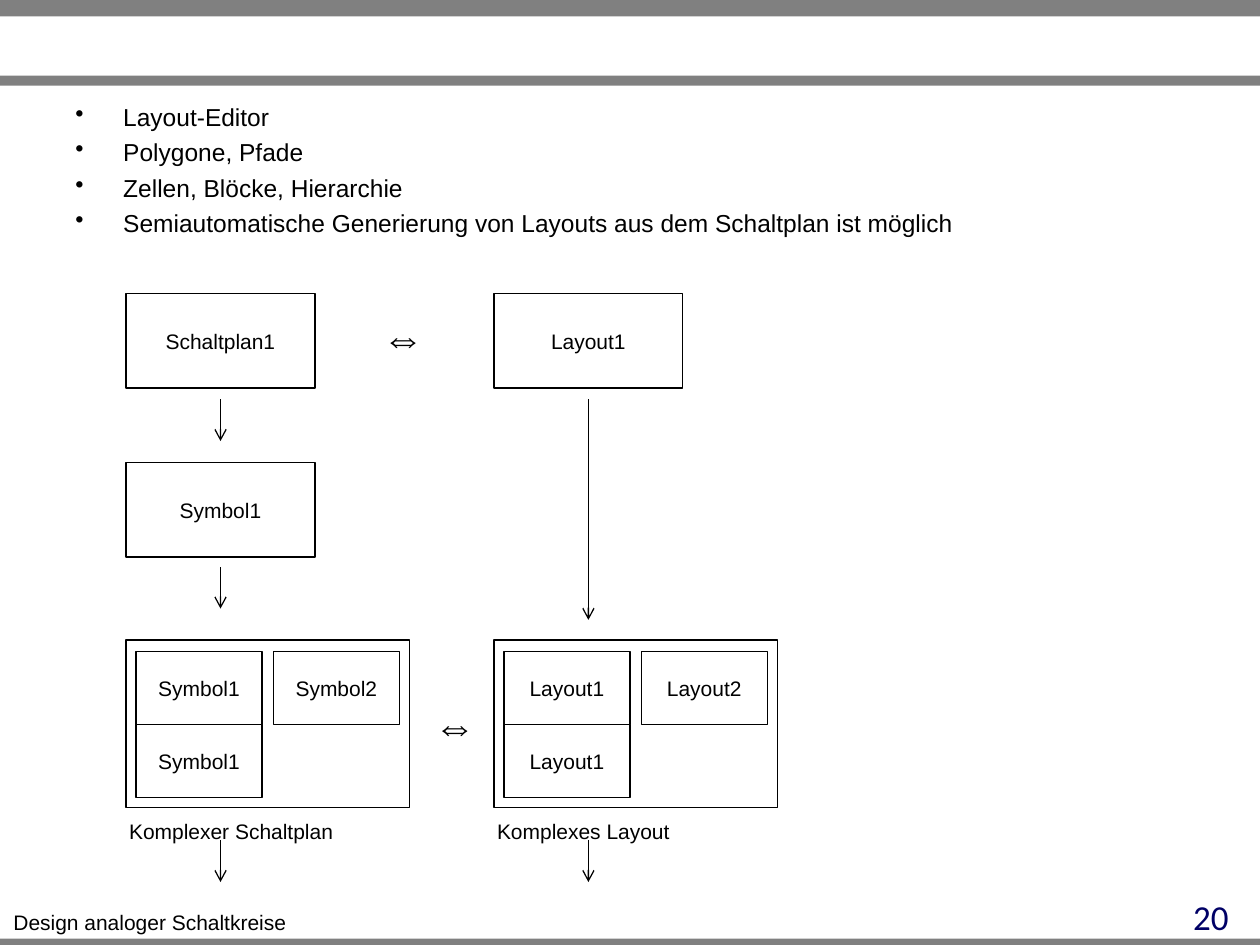
import pptx
import pptx.util
import pptx.dml.color
import pptx.enum.shapes
import pptx.enum.text
import pptx.oxml.ns
import lxml.etree

Inches, Pt = pptx.util.Inches, pptx.util.Pt
RGBColor = pptx.dml.color.RGBColor
RECT = pptx.enum.shapes.MSO_SHAPE.RECTANGLE
LINE = pptx.enum.shapes.MSO_CONNECTOR.STRAIGHT
ALIGN = pptx.enum.text.PP_ALIGN
MIDDLE = pptx.enum.text.MSO_ANCHOR.MIDDLE
FIT = pptx.enum.text.MSO_AUTO_SIZE.SHAPE_TO_FIT_TEXT
qn = pptx.oxml.ns.qn

BLACK = RGBColor(0, 0, 0)
GREY = RGBColor(0x80, 0x80, 0x80)
NAVY = RGBColor(0, 0, 0x66)
LABEL = {"name": "Arial", "size": Pt(12)}
LIST = {"name": "Arial", "size": Pt(14)}
SIGN = {"name": "Arial", "size": Pt(24)}
PAGE = {"name": "Calibri", "size": Pt(20)}


def style(para, form, color=BLACK):
    for key, value in form.items():
        setattr(para.font, key, value)
    para.font.color.rgb = color


def add_bar(slide, top, height):
    bar = slide.shapes.add_shape(RECT, 0, Inches(top), Inches(10), Inches(height))
    bar.shadow.inherit = False
    bar.fill.solid()
    bar.fill.fore_color.rgb = GREY
    bar.line.fill.background()


def add_box(slide, left, top, width, height, text=""):
    box = slide.shapes.add_shape(
        RECT, Inches(left), Inches(top), Inches(width), Inches(height))
    box.shadow.inherit = False
    box.fill.background()
    box.line.color.rgb = BLACK
    box.line.width = Pt(0.75)
    if text:
        box.text_frame.vertical_anchor = MIDDLE
        para = box.text_frame.paragraphs[0]
        para.text = text
        para.alignment = ALIGN.CENTER
        style(para, LABEL)


def add_text(slide, left, top, width, height, text, form,
             color=BLACK, align=ALIGN.CENTER, wrap=False):
    box = slide.shapes.add_textbox(
        Inches(left), Inches(top), Inches(width), Inches(height))
    frame = box.text_frame
    frame.word_wrap = wrap
    if not wrap:
        frame.auto_size = FIT
    para = frame.paragraphs[0]
    para.text = text
    para.alignment = align
    style(para, form, color)


def add_arrow(slide, x, top, end):
    arrow = slide.shapes.add_connector(
        LINE, Inches(x), Inches(top), Inches(x), Inches(end))
    arrow.line.color.rgb = BLACK
    arrow.line.width = Pt(0.75)
    props = arrow.element.spPr
    tail = lxml.etree.SubElement(props.find(qn("a:ln")), qn("a:tailEnd"))
    tail.set("type", "arrow")
    lxml.etree.SubElement(props, qn("a:effectLst"))


def add_frame(slide):
    for top, height in ((7.45, 0.08), (0, 0.13), (0.6, 0.08)):
        add_bar(slide, top, height)
    add_text(slide, 0, 7.17, 2.38, 0.3, "Design analoger Schaltkreise", LABEL)
    add_text(slide, 7.52, 7.06, 2.33, 0.31, "20", PAGE, NAVY, ALIGN.RIGHT, True)


def add_list(slide, left, top, width, height, items):
    box = slide.shapes.add_textbox(
        Inches(left), Inches(top), Inches(width), Inches(height))
    frame = box.text_frame
    frame.word_wrap = True
    for i, item in enumerate(items):
        para = frame.add_paragraph() if i else frame.paragraphs[0]
        para.text = item
        props = para._p.get_or_add_pPr()
        props.set("marL", str(Inches(0.38)))
        props.set("indent", str(-Inches(0.38)))
        lxml.etree.SubElement(props, qn("a:buChar")).set("char", "•")
        if i:
            para.space_before = Pt(3.4)
        style(para, LIST)


def add_cell(slide, left, top, part, title, width):
    """Draw a complex cell: two stacked parts, one beside them, and a caption."""
    add_box(slide, left, top, 2.25, 1.33)
    for dx, dy, num in ((0.08, 0.09, 1), (1.17, 0.09, 2), (0.08, 0.67, 1)):
        add_box(slide, left + dx, top + dy, 1, 0.58, f"{part}{num}")
    add_text(slide, left - 0.08, top + 1.37, width, 0.3, title, LABEL)


def add_flow(slide, left, top, steps, arrows, cell):
    """Draw one column: boxes 1.34 apart, arrows, and the complex cell below."""
    for i, step in enumerate(steps):
        add_box(slide, left, top + 1.34 * i, 1.5, 0.75, step)
    for start, end in arrows:
        add_arrow(slide, left + 0.75, top + start, top + end)
    add_cell(slide, left, top + 2.75, *cell)


def main():
    deck = pptx.Presentation()
    deck.slide_width, deck.slide_height = Inches(10), Inches(7.5)
    slide = deck.slides.add_slide(deck.slide_layouts[6])
    add_frame(slide)
    add_list(slide, 0.5, 0.76, 9, 1.83, (
        "Layout-Editor",
        "Polygone, Pfade",
        "Zellen, Blöcke, Hierarchie",
        "Semiautomatische Generierung von Layouts aus dem Schaltplan ist möglich",
    ))
    last = (4.34, 4.67)
    add_flow(slide, 1, 2.33, ("Schaltplan1", "Symbol1"),
             ((0.84, 1.17), (2.17, 2.5), last),
             ("Symbol", "Komplexer Schaltplan", 1.83))
    add_flow(slide, 3.92, 2.33, ("Layout1",), ((0.84, 2.59), last),
             ("Layout", "Komplexes Layout", 1.58))
    for left, top in ((2.92, 2.42), (3.33, 5.5)):
        add_text(slide, left, top, 0.56, 0.5, "⇔", SIGN)
    deck.save("out.pptx")


if __name__ == "__main__":
    main()
